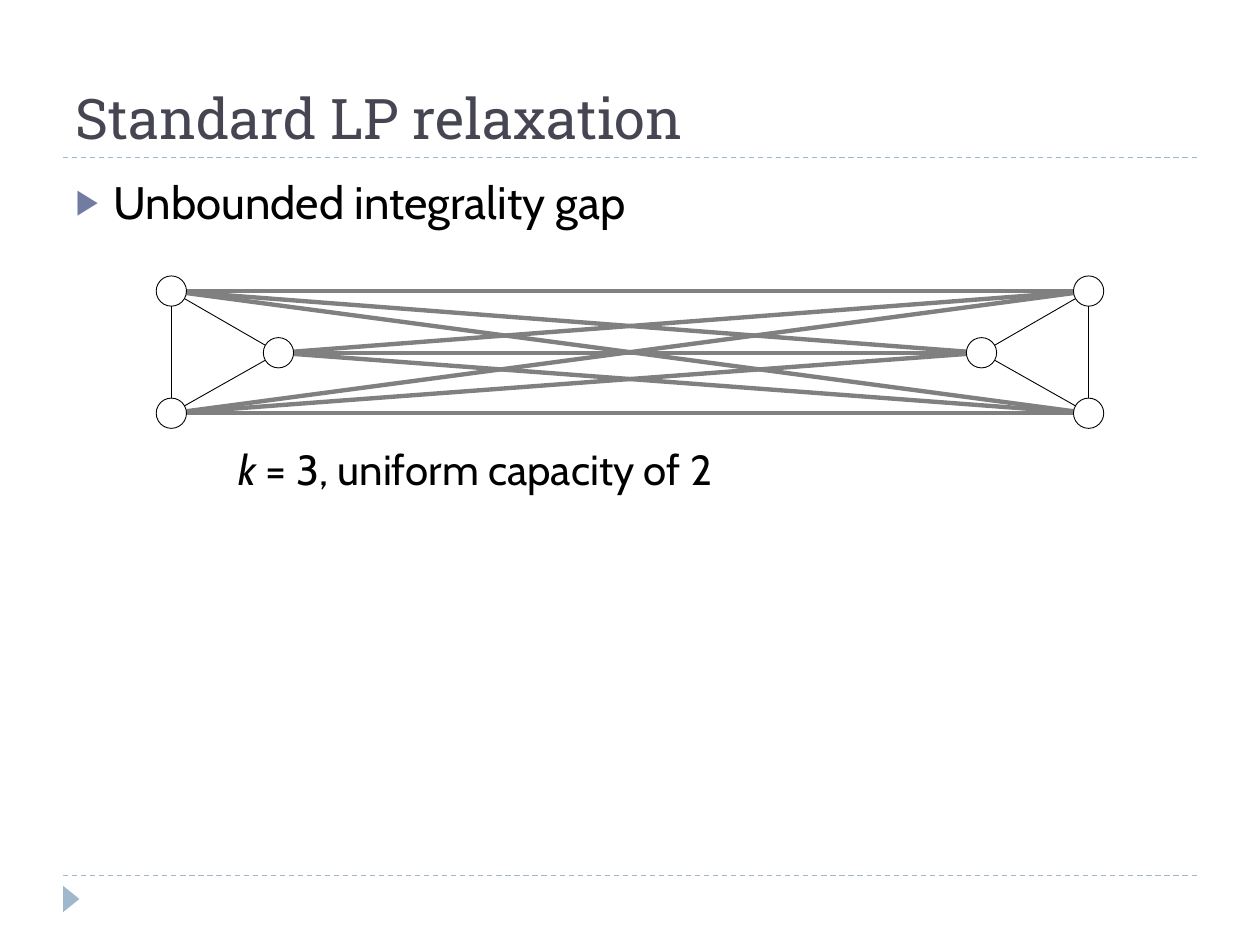
from dataclasses import dataclass
from itertools import combinations, product

from pptx import Presentation
from pptx.dml.color import RGBColor
from pptx.enum.dml import MSO_LINE
from pptx.enum.shapes import MSO_CONNECTOR, MSO_SHAPE
from pptx.enum.text import MSO_ANCHOR, MSO_AUTO_SIZE, PP_ALIGN
from pptx.oxml.ns import qn
from pptx.util import Inches, Pt
from lxml.etree import SubElement


@dataclass(frozen=True)
class Theme:
    title_font: str = "Roboto Slab"
    body_font: str = "Cabin"
    title_size: float = 32
    body_size: float = 26
    caption_size: float = 24
    title: str = "464653"
    text: str = "000000"
    bullet: str = "727CA3"
    accent: str = "9FB8CD"
    node: str = "FFFFFF"
    heavy_edge: str = "808080"
    thin_edge: str = "000000"
    rule_width: float = 0.75
    heavy_width: float = 2.5
    thin_width: float = 0.5


def rgb(value):
    return RGBColor.from_string(value)


class SlideBuilder:
    """Draws styled elements on one slide."""

    def __init__(self, slide, theme):
        self.slide = slide
        self.theme = theme

    def run(self, para, text, font, size, color, italic=False):
        span = para.add_run()
        span.text = text
        span.font.name = font
        span.font.size = Pt(size)
        span.font.color.rgb = rgb(color)
        span.font.italic = italic

    def place(self, box, left, top, width, height, anchor):
        """Move a placeholder and return its text frame."""
        box.left, box.top = Inches(left), Inches(top)
        box.width, box.height = Inches(width), Inches(height)
        frame = box.text_frame
        frame.word_wrap = True
        frame.auto_size = MSO_AUTO_SIZE.NONE
        frame.vertical_anchor = anchor
        return frame

    def title(self, text):
        theme = self.theme
        frame = self.place(self.slide.shapes.title, 0.5, 0.17, 9, 1.08, MSO_ANCHOR.BOTTOM)
        para = frame.paragraphs[0]
        para.alignment = PP_ALIGN.LEFT
        self.run(para, text, theme.title_font, theme.title_size, theme.title)

    def indent(self, para, margin, first_line, space_before):
        para.space_before = Pt(space_before)
        props = para._p.get_or_add_pPr()
        props.set("marL", str(Inches(margin)))
        props.set("indent", str(Inches(first_line)))
        return props

    def body(self, bullet, caption):
        """Fill the body with a bullet and a caption of (text, italic) spans."""
        theme = self.theme
        frame = self.place(self.slide.placeholders[1], 0.5, 1.33, 9, 5.4, MSO_ANCHOR.TOP)
        para = frame.paragraphs[0]
        props = self.indent(para, 0.3, -0.3, 6)
        color = SubElement(props, qn("a:buClr"))
        SubElement(color, qn("a:srgbClr"), val=theme.bullet)
        SubElement(props, qn("a:buSzPct"), val="76000")
        SubElement(props, qn("a:buChar"), char="▶")
        self.run(para, bullet, theme.body_font, theme.body_size, theme.text)

        para = frame.add_paragraph()
        props = self.indent(para, 1.29, 0, 123)  # leaves room for the graph
        SubElement(props, qn("a:buNone"))
        for text, italic in caption:
            self.run(para, text, theme.body_font, theme.caption_size, theme.text, italic)

    def line(self, start, end, color, width, dash=None):
        points = [Inches(value) for value in (*start, *end)]
        line = self.slide.shapes.add_connector(MSO_CONNECTOR.STRAIGHT, *points)
        line.line.color.rgb = rgb(color)
        line.line.width = Pt(width)
        if dash:
            line.line.dash_style = dash
        SubElement(line._element.spPr, qn("a:effectLst"))

    def rule(self, y):
        self.line((0.5, y), (9.5, y), self.theme.accent, self.theme.rule_width, MSO_LINE.DASH)

    def shape(self, kind, left, top, width, height, fill):
        shape = self.slide.shapes.add_shape(
            kind, Inches(left), Inches(top), Inches(width), Inches(height))
        shape.shadow.inherit = False
        shape.fill.solid()
        shape.fill.fore_color.rgb = rgb(fill)
        shape.line.fill.background()
        return shape

    def page_marker(self):
        marker = self.shape(MSO_SHAPE.ISOSCELES_TRIANGLE, 0.46, 7.07, 0.21, 0.13,
                            self.theme.accent)
        marker.rotation = 90

    def node(self, center, size=0.24):
        x, y = center
        circle = self.shape(MSO_SHAPE.OVAL, x - size / 2, y - size / 2, size, size,
                            self.theme.node)
        circle.line.color.rgb = rgb(self.theme.thin_edge)
        circle.line.width = Pt(self.theme.thin_width)

    def graph(self, left, right):
        """Join two cliques by heavy edges between every pair of nodes."""
        theme = self.theme
        for start, end in product(left, right):
            self.line(start, end, theme.heavy_edge, theme.heavy_width)
        for clique in (left, right):
            for start, end in combinations(clique, 2):
                self.line(start, end, theme.thin_edge, theme.thin_width)
            for center in clique:
                self.node(center)


def main():
    deck = Presentation()
    deck.slide_width, deck.slide_height = Inches(10), Inches(7.5)
    page = SlideBuilder(deck.slides.add_slide(deck.slide_layouts[1]), Theme())

    page.rule(6.95)
    page.rule(1.25)
    page.page_marker()
    page.title("Standard LP relaxation")
    page.body("Unbounded integrality gap",
              [("k ", True), ("= 3, uniform capacity of 2", False)])

    left = [(1.36, 2.31), (2.21, 2.8), (1.36, 3.28)]
    right = [(10 - x, y) for x, y in left]
    page.graph(left, right)

    deck.save("out.pptx")


if __name__ == "__main__":
    main()
